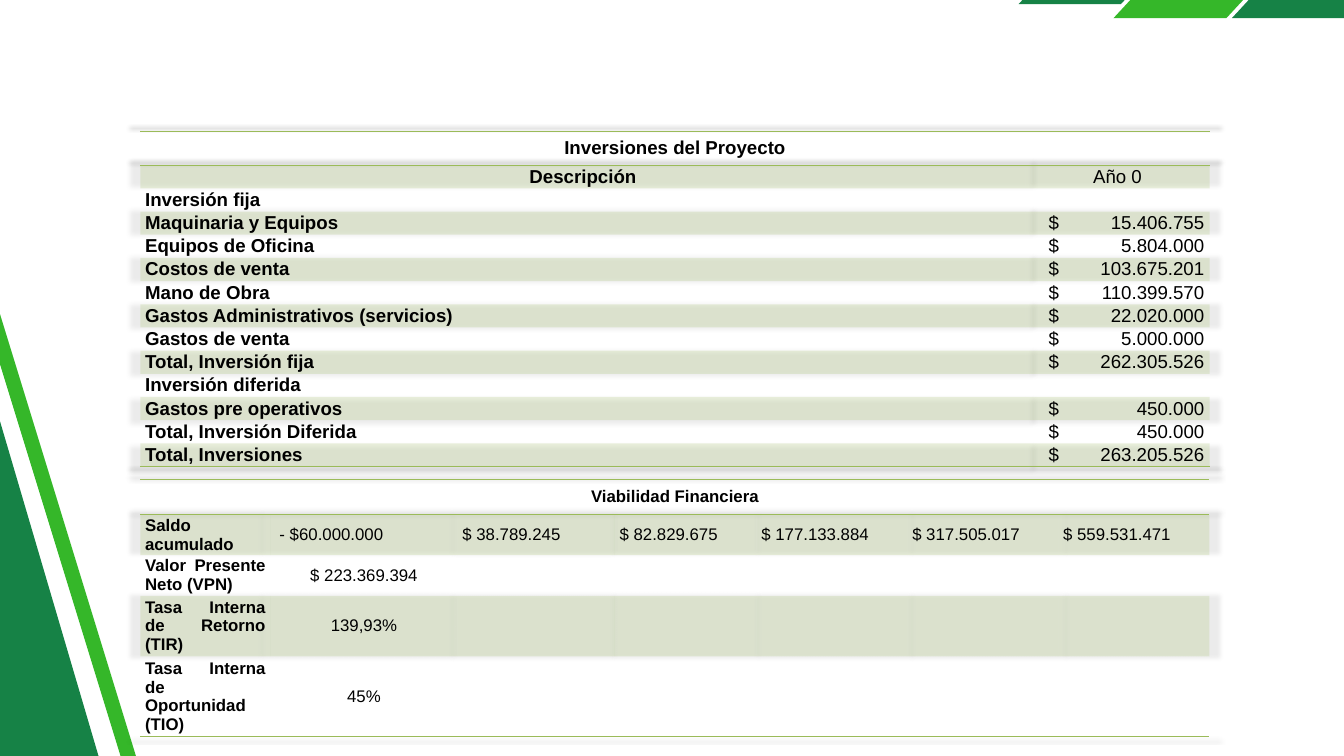
from lxml.etree import SubElement
from pptx import Presentation
from pptx.dml.color import RGBColor
from pptx.enum.text import MSO_ANCHOR as Anchor, PP_ALIGN as Align
from pptx.oxml import parse_xml
from pptx.oxml.ns import nsdecls, qn
from pptx.util import Pt

DARK, LIGHT, OLIVE, BLACK = "168246", "35B729", "9BBB59", "000000"
PLAIN = "{2D5ABB26-0587-4C30-8999-92F81FD0307C}"
LEFT, WIDTH = 150.5, 1145.5
COST = 197.3
INSET, INDENT = 5, 25

COSTS = [
    ("Inversión fija", ""),
    ("Maquinaria y Equipos", "15.406.755"),
    ("Equipos de Oficina", "5.804.000"),
    ("Costos de venta", "103.675.201"),
    ("Mano de Obra", "110.399.570"),
    ("Gastos Administrativos (servicios)", "22.020.000"),
    ("Gastos de venta", "5.000.000"),
    ("Total, Inversión fija", "262.305.526"),
    ("Inversión diferida", ""),
    ("Gastos pre operativos", "450.000"),
    ("Total, Inversión Diferida", "450.000"),
    ("Total, Inversiones", "263.205.526"),
]
RETURNS = [
    ["Saldo acumulado", " - $60.000.000", "$ 38.789.245", "$ 82.829.675",
     "$ 177.133.884", "$ 317.505.017", "$ 559.531.471"],
    ["Valor Presente Neto (VPN)", "$ 223.369.394"],
    ["Tasa Interna de Retorno (TIR)", "139,93%"],
    ["Tasa Interna de Oportunidad (TIO)", "45%"],
]


def color(code):
    return RGBColor.from_string(code)


def add_band(slide, points, code, turn=0):
    """Draw a closed, filled outline, turned about its centre."""
    start, *rest = [(Pt(x), Pt(y)) for x, y in points]
    pen = slide.shapes.build_freeform(*start)
    pen.add_line_segments(rest, close=True)
    band = pen.convert_to_shape()
    band.shadow.inherit = False
    band.fill.solid()
    band.fill.fore_color.rgb = color(code)
    band.line.fill.background()
    band.rotation = turn


def add_slant(slide, left, top, width, height, skew, code):
    right, low = left + width, top + height
    add_band(slide, [(left + skew, top), (right, top),
                     (right - skew, low), (left, low)], code)


def add_grid(slide, top, widths, heights):
    """Add an unstyled table with a soft shadow."""
    frame = slide.shapes.add_table(len(heights), len(widths), Pt(LEFT), Pt(top),
                                   Pt(WIDTH), Pt(sum(heights)))
    table = frame.table
    for col, width in zip(table.columns, widths):
        col.width = Pt(width)
    for row, height in zip(table.rows, heights):
        row.height = Pt(height)
    props = table._tbl.tblPr
    props.find(qn("a:tableStyleId")).text = PLAIN
    props.insert(0, parse_xml(
        f'<a:effectLst {nsdecls("a")}><a:outerShdw blurRad="63500" sx="102000" '
        'sy="102000" algn="ctr" rotWithShape="0"><a:prstClr val="black">'
        '<a:alpha val="40000"/></a:prstClr></a:outerShdw></a:effectLst>'))
    for cell in table.iter_cells():
        cell.margin_left = cell.margin_right = Pt(INSET)
        cell.margin_top = cell.margin_bottom = 0
        cell.vertical_anchor = Anchor.MIDDLE
        cell.fill.background()
    return table


def write(cell, text, size, align, bold=False):
    para = cell.text_frame.paragraphs[0]
    para.text = text
    para.alignment = align
    for run in para.runs:
        font = run.font
        font.name, font.size, font.bold = "Arial", Pt(size), bold
        font.color.rgb = color(BLACK)


def write_cost(cell, cost, size):
    """Set the dollar sign at left and the sum at a right tab."""
    cell.margin_left = Pt(INDENT)
    props = cell.text_frame.paragraphs[0]._p.get_or_add_pPr()
    tabs = SubElement(props, qn("a:tabLst"))
    stop = Pt(COST - INDENT - INSET - 0.5)
    SubElement(tabs, qn("a:tab"), pos=str(stop), algn="r")
    write(cell, f"$\t{cost}", size, Align.LEFT)


def rule(cell, *sides):
    for side in sides:
        cell._tc.get_or_add_tcPr().insert(0, parse_xml(
            f'<a:ln{side} {nsdecls("a")} w="12700"><a:solidFill>'
            f'<a:srgbClr val="{OLIVE}"/></a:solidFill></a:ln{side}>'))


def tint(cell):
    cell.fill.solid()
    cell.fill.fore_color.rgb = color(OLIVE)
    code = cell._tc.tcPr.find(".//" + qn("a:srgbClr"))
    SubElement(code, qn("a:alpha"), val="20000")


def dress(table, title, size):
    """Write the title row, tint every other row and rule the ends."""
    rows, cols = len(table.rows), len(table.columns)
    for col in range(cols):
        for row in range(1, rows, 2):
            tint(table.cell(row, col))
        rule(table.cell(0, col), "B", "T")
        rule(table.cell(rows - 1, col), "B")
    head = table.cell(0, 0)
    head.merge(table.cell(0, cols - 1))
    write(head, title, size, Align.CENTER, True)


def add_costs(slide):
    size = 20
    table = add_grid(slide, 141, [WIDTH - COST, COST], [36] + [24.85] * 13)
    dress(table, "Inversiones del Proyecto", size)
    write(table.cell(1, 0), "Descripción", size, Align.CENTER, True)
    write(table.cell(1, 1), "Año 0", size, Align.CENTER)
    for row, (name, cost) in enumerate(COSTS, 2):
        write(table.cell(row, 0), name, size, Align.LEFT, True)
        if cost:
            write_cost(table.cell(row, 1), cost, size)


def add_returns(slide):
    size = 18
    table = add_grid(slide, 513.4, [139, 200.9, 168.5, 151.9] + [161.7] * 3,
                     [38, 43.5, 43.5, 65, 86])
    dress(table, "Viabilidad Financiera", size)
    for row, texts in enumerate(RETURNS, 1):
        for col, text in enumerate(texts):
            center = row > 1 and col > 0
            align = Align.CENTER if center else Align.JUSTIFY
            write(table.cell(row, col), text, size, align, col == 0)


def main():
    deck = Presentation()
    deck.slide_width, deck.slide_height = Pt(1440), Pt(810)
    slide = deck.slides.add_slide(deck.slide_layouts[6])
    add_slant(slide, 1091.5, -62, 170.6, 66.3, 61, DARK)
    for left, code in [(1193, LIGHT), (1319.8, DARK)]:
        add_slant(slide, left, -76.3, 209.5, 95.8, 88.6, code)
    for left, top, height, code, turn in [(-726.5, 448.6, 360.7, DARK, 253.6),
                                          (-509.8, 618.5, 15.8, LIGHT, 252.9)]:
        right, low = left + 1181.5, top + height
        add_band(slide, [(left, top), (right, top), (right, low), (left, low)],
                 code, turn)
    add_costs(slide)
    add_returns(slide)
    deck.save("out.pptx")


if __name__ == "__main__":
    main()
